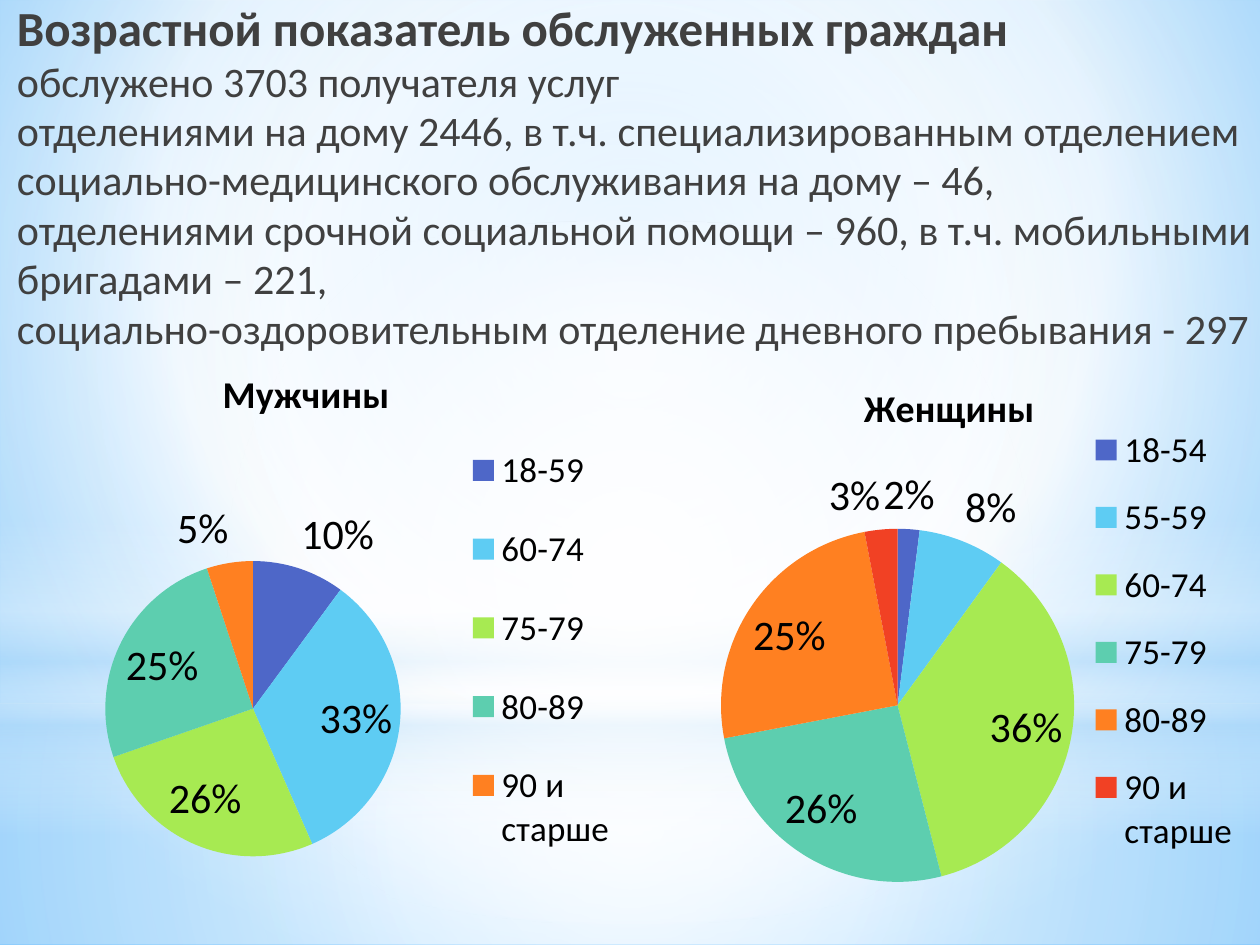
"""Build a slide with the age profile of served citizens: a title and two pie charts."""
from pptx import Presentation
from pptx.chart.data import CategoryChartData
from pptx.dml.color import RGBColor
from pptx.enum import chart as ch, shapes, text
from pptx.oxml import parse_xml
from pptx.oxml.ns import nsdecls, qn
from pptx.util import Pt

THEME = {
    "font": "Calibri", "ink": "404040", "black": "000000",
    "head": 28, "body": 24, "label": 24, "legend": 20, "name": 21.6,
    "pie": ["4E67C8", "5ECCF3", "A7EA52", "5DCEAF", "FF8021", "F14124"],
}
HEAD = "Возрастной показатель обслуженных граждан"
BODY = [
    "обслужено 3703 получателя услуг",
    "отделениями на дому 2446, в т.ч. специализированным отделением "
    "социально-медицинского обслуживания на дому – 46, ",
    "отделениями срочной социальной помощи – 960, в т.ч. мобильными бригадами – 221, ",
    "социально-оздоровительным отделение дневного пребывания - 297",
]
PIES = [
    {"name": "Женщины", "box": (366, 204, 354, 337.5),
     "data": {"18-54": 2, "55-59": 8, "60-74": 36, "75-79": 26,
              "80-89": 25, "90 и старше": 3},
     "title": (0.35, 0.03), "plot": (0.13, 0.29, 0.57, 0.6),
     "legend": (0.72, 0.08, 0.25, 0.8)},
    {"name": "Мужчины", "box": (3, 202.5, 354, 337.5),
     "data": {"18-59": 10, "60-74": 33, "75-79": 26, "80-89": 25, "90 и старше": 5},
     "title": (0.34, 0.01), "plot": (0.16, 0.35, 0.48, 0.5),
     "legend": (0.74, 0.1, 0.25, 0.8)},
]
MID = (50, 50, 50, 50)
BACK = [(0, "9ED5FF", 100), (60, "FFFFFF", 100), (100, "5BB9FF", 100)]
GLOWS = [
    ("RECTANGLE", (0, 402, 720, 138), MID,
     [(0, "FFFFFF", 91), (37, "FFFFFF", 76), (100, "B4DCFA", 79)]),
    ("RECTANGLE", (0, 0, 720, 402), MID,
     [(0, "FFFFFF", 89), (48, "FFFFFF", 62), (100, "B4DCFA", 79)]),
    ("RECTANGLE", (0, 297, 720, 180), None,
     [(0, "FFFFFF", 0), (29, "FFFFFF", 30), (45, "B4DCFA", 40),
      (55, "FFFFFF", 26), (65, "B4DCFA", 60), (100, "FFFFFF", 0)]),
    ("OVAL", (0, 126, 720, 402), MID, [(0, "FFFFFF", 100), (56, "FFFFFF", 0)]),
]


def style(font, size, color=THEME["black"], bold=False):
    font.name, font.size, font.bold = THEME["font"], Pt(size), bold
    font.color.rgb = RGBColor.from_string(color)


def write(para, words, **form):
    run = para.add_run()
    run.text = words
    style(run.font, **form)


def blend(fill, node, stops, focus):
    fill.solid()
    marks = "".join(
        f'<a:gs pos="{pos * 1000}"><a:srgbClr val="{color}">'
        f'<a:alpha val="{alpha * 1000}"/></a:srgbClr></a:gs>'
        for pos, color, alpha in stops)
    if focus:
        sides = " ".join(f'{side}="{part * 1000}"' for side, part in zip("ltrb", focus))
        shade = f'<a:path path="circle"><a:fillToRect {sides}/></a:path>'
    else:
        shade = '<a:lin ang="5400000" scaled="0"/>'
    grad = parse_xml(f'<a:gradFill {nsdecls("a")} rotWithShape="1">'
                     f'<a:gsLst>{marks}</a:gsLst>{shade}</a:gradFill>')
    node.replace(node.find(qn("a:solidFill")), grad)


def place(node, spot, inner=False):
    for old in node.findall(qn("c:layout")):
        node.remove(old)
    keys = ("x", "y", "w", "h")[:len(spot)]
    rows = '<c:layoutTarget val="inner"/>' if inner else ""
    rows += "".join(f'<c:{key}Mode val="edge"/>' for key in keys[:2])
    rows += "".join(f'<c:{key} val="{val}"/>' for key, val in zip(keys, spot))
    plan = parse_xml(f'<c:layout {nsdecls("c")}><c:manualLayout>{rows}'
                     f'</c:manualLayout></c:layout>')
    lead = node.find(qn("c:tx"))
    if lead is None:
        lead = node.find(qn("c:legendPos"))
    if lead is None:
        node.insert(0, plan)
    else:
        lead.addnext(plan)


def add_pie(slide, item):
    data = CategoryChartData()
    data.categories = list(item["data"])
    data.add_series(item["name"], list(item["data"].values()))
    chart = slide.shapes.add_chart(
        ch.XL_CHART_TYPE.PIE, *map(Pt, item["box"]), data).chart
    style(chart.font, 18)
    chart.has_title = chart.has_legend = True
    write(chart.chart_title.text_frame.paragraphs[0], item["name"],
          size=THEME["name"], bold=True)
    chart.chart_title.include_in_layout = False
    legend = chart.legend
    legend.position, legend.include_in_layout = ch.XL_LEGEND_POSITION.RIGHT, False
    style(legend.font, THEME["legend"])
    plot = chart.plots[0]
    plot.vary_by_categories = plot.has_data_labels = True
    tags = plot.data_labels
    tags.show_percentage, tags.show_value = True, False
    tags.number_format, tags.number_format_is_linked = "0%", False
    tags.position = ch.XL_LABEL_POSITION.BEST_FIT
    style(tags.font, THEME["label"])
    for num, color in enumerate(THEME["pie"][:len(item["data"])]):
        fill = plot.series[0].points[num].format.fill
        fill.solid()
        fill.fore_color.rgb = RGBColor.from_string(color)
    root = chart._chartSpace.chart
    place(root.find(qn("c:title")), item["title"])
    place(root.plotArea, item["plot"], inner=True)
    place(legend._element, item["legend"])


def main():
    deck = Presentation()
    deck.slide_width, deck.slide_height = Pt(720), Pt(540)
    slide = deck.slides.add_slide(deck.slide_layouts[5])
    back = slide.background.fill
    back.solid()
    blend(back, slide._element.find(".//" + qn("p:bgPr")), BACK, (20, 10, 20, 60))

    title = slide.shapes.title
    for kind, box, focus, stops in GLOWS:
        glow = slide.shapes.add_shape(
            getattr(shapes.MSO_SHAPE, kind), *map(Pt, box))
        glow.shadow.inherit = False
        glow.line.fill.background()
        blend(glow.fill, glow._element.spPr, stops, focus)
        title._element.addprevious(glow._element)

    title.left, title.top, title.width, title.height = map(Pt, (2.5, 0, 720, 207.5))
    frame = title.text_frame
    frame.word_wrap = True
    frame.vertical_anchor = text.MSO_ANCHOR.TOP
    frame.auto_size = text.MSO_AUTO_SIZE.NONE
    frame.margin_top = frame.margin_bottom = Pt(0)
    para = frame.paragraphs[0]
    para.alignment, para.line_spacing = text.PP_ALIGN.LEFT, 0.98
    write(para, HEAD, size=THEME["head"], color=THEME["ink"], bold=True)
    for line in BODY:
        para.add_line_break()
        write(para, line, size=THEME["body"], color=THEME["ink"])

    for item in PIES:
        add_pie(slide, item)
    deck.save("out.pptx")


if __name__ == "__main__":
    main()
